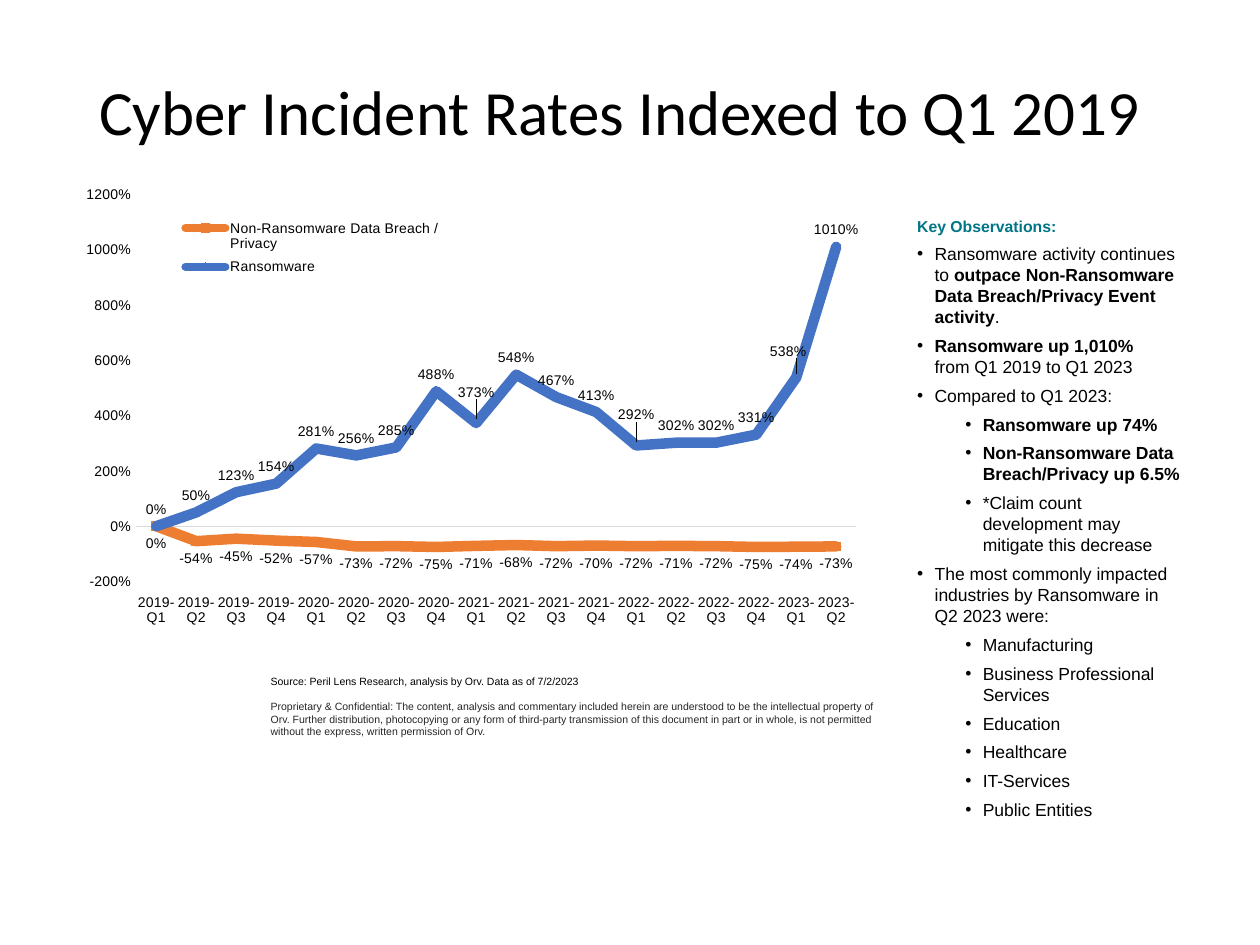
from dataclasses import dataclass
from typing import NamedTuple

from pptx import Presentation
from pptx.chart.data import CategoryChartData
from pptx.dml.color import RGBColor
from pptx.enum.chart import (XL_CHART_TYPE, XL_LABEL_POSITION, XL_LEGEND_POSITION,
                             XL_TICK_LABEL_POSITION, XL_TICK_MARK)
from pptx.enum.text import MSO_ANCHOR
from pptx.oxml import parse_xml
from pptx.oxml.ns import nsdecls, qn
from pptx.util import Pt


@dataclass(frozen=True)
class Theme:
    head: str = "Calibri"
    body: str = "Arial"
    ink: str = "000000"
    soft: str = "262626"
    teal: str = "007585"
    rule: str = "D9D9D9"
    orange: str = "ED7D31"
    blue: str = "4472C4"
    title: float = 36
    text: float = 10
    key: float = 9
    label: float = 8
    note: float = 6


class Box(NamedTuple):
    left: float
    top: float
    width: float
    height: float


class Run(NamedTuple):
    text: str
    bold: bool = False


class Item(NamedTuple):
    runs: list
    level: int = 0


class Line(NamedTuple):
    name: str
    color: str
    side: XL_LABEL_POSITION
    values: list
    moved: dict  # point index -> label offset as fractions of the chart


THEME = Theme()
INDENT = (10, 37.5)
HANG = 10
GAP = 2.2
BREAK = "\n"

QUARTERS = [f"{year}-Q{q}" for year in range(2019, 2024) for q in range(1, 5)][:18]
LINES = [
    Line("Non-Ransomware Data Breach / Privacy", THEME.orange, XL_LABEL_POSITION.BELOW,
         [0, -0.54, -0.45, -0.52, -0.57, -0.73, -0.72, -0.75, -0.71, -0.68,
          -0.72, -0.7, -0.72, -0.71, -0.72, -0.75, -0.74, -0.73], {}),
    Line("Ransomware", THEME.blue, XL_LABEL_POSITION.ABOVE,
         [0, 0.5, 1.23, 1.54, 2.81, 2.56, 2.85, 4.88, 3.73, 5.48,
          4.67, 4.13, 2.92, 3.02, 3.02, 3.31, 5.38, 10.1],
         {8: (0, -0.03), 12: (0, -0.03), 16: (-0.01, -0.02)}),
]
ITEMS = [
    Item([Run("Ransomware activity continues to "),
          Run("outpace Non-Ransomware Data Breach/Privacy Event activity", True), Run(".")]),
    Item([Run("Ransomware up 1,010%", True), Run(BREAK), Run("from Q1 2019 to Q1 2023")]),
    Item([Run("Compared to Q1 2023:")]),
    Item([Run("Ransomware up 74%", True)], 1),
    Item([Run("Non-Ransomware Data Breach/Privacy up 6.5%", True)], 1),
    Item([Run("*Claim count development may mitigate this decrease")], 1),
    Item([Run("The most commonly impacted industries by Ransomware in Q2 2023 were:")]),
    *(Item([Run(name)], 1) for name in (
        "Manufacturing", "Business Professional Services", "Education",
        "Healthcare", "IT-Services", "Public Entities")),
]
SOURCE = "Source: Peril Lens Research, analysis by Orv. Data as of 7/2/2023"
NOTICE = ("Proprietary & Confidential: The content, analysis and commentary included herein "
          "are understood to be the intellectual property of Orv. Further distribution, "
          "photocopying or any form of third-party transmission of this document in part or "
          "in whole, is not permitted without the express, written permission of Orv.")


def rgb(color: str) -> RGBColor:
    return RGBColor.from_string(color)


def style(font, size: float, color: str = THEME.ink, bold: bool = False,
          face: str = THEME.body) -> None:
    font.size, font.bold, font.name = Pt(size), bold, face
    font.color.rgb = rgb(color)


def add_frame(slide, box: Box):
    frame = slide.shapes.add_textbox(*map(Pt, box)).text_frame
    frame.word_wrap = True
    return frame


def add_run(para, text: str, size: float, **look) -> None:
    run = para.add_run()
    run.text = text
    style(run.font, size, **look)


def add_bullet(para, level: int) -> None:
    props = para._p.get_or_add_pPr()
    props.set("marL", str(Pt(INDENT[level])))
    props.set("indent", str(-Pt(HANG)))
    props.append(parse_xml(f'<a:buClr {nsdecls("a")}><a:srgbClr val="{THEME.ink}"/></a:buClr>'))
    props.append(parse_xml(f'<a:buFont {nsdecls("a")} typeface="{THEME.body}"/>'))
    props.append(parse_xml(f'<a:buChar {nsdecls("a")} char="•"/>'))


def add_title(slide) -> None:
    frame = add_frame(slide, Box(49.7, 38.2, 620.6, 54.7))
    frame.vertical_anchor = MSO_ANCHOR.MIDDLE
    para = frame.paragraphs[0]
    para.line_spacing = 0.9
    add_run(para, "Cyber Incident Rates Indexed to Q1 2019", THEME.title, face=THEME.head)


def add_points(slide) -> None:
    frame = add_frame(slide, Box(517, 120.2, 166.3, 373.7))
    para = frame.paragraphs[0]
    para.space_after = Pt(GAP)
    add_run(para, "Key Observations:", THEME.key, color=THEME.teal, bold=True)
    for item in ITEMS:
        para = frame.add_paragraph()
        para.level = item.level
        para.space_before = para.space_after = Pt(GAP)
        add_bullet(para, item.level)
        for run in item.runs:
            if run.text == BREAK:
                para.add_line_break()
            else:
                add_run(para, run.text, THEME.text, bold=run.bold)


def add_notes(slide) -> None:
    frame = add_frame(slide, Box(147.6, 382.3, 362.9, 43.9))
    add_run(frame.paragraphs[0], SOURCE, THEME.note)
    para = frame.add_paragraph()
    para.space_before = Pt(7)
    add_run(para, NOTICE, THEME.note, color=THEME.soft)


def set_layout(node, index: int, **parts) -> None:
    """Give a chart part a manual layout, as its child at this index."""
    for old in node.findall(qn("c:layout")):
        node.remove(old)
    body = "".join(f'<c:{tag} val="{val}"/>' for tag, val in parts.items())
    node.insert(index, parse_xml(
        f'<c:layout {nsdecls("c")}><c:manualLayout>{body}</c:manualLayout></c:layout>'))


def style_line(series, line: Line) -> None:
    series.smooth = False
    series.marker.style = None
    series.format.line.color.rgb = rgb(line.color)
    series.format.line.width = Pt(6)
    series._element.find(".//" + qn("a:ln")).set("cap", "rnd")
    labels = series.data_labels
    labels.show_value = True
    labels.number_format, labels.number_format_is_linked = "0%", False
    labels.position = line.side
    style(labels.font, THEME.label)
    for index, (dx, dy) in line.moved.items():
        label = series.points[index].data_label
        label.position = line.side
        style(label.font, THEME.label)
        node = series._element.xpath(f'c:dLbls/c:dLbl[c:idx/@val="{index}"]')[0]
        set_layout(node, 1, x=dx, y=dy)
        node.insert(2, parse_xml(
            f'<c:numFmt {nsdecls("c")} formatCode="0%" sourceLinked="0"/>'))


def style_axes(chart) -> None:
    cat, val = chart.category_axis, chart.value_axis
    for axis in (cat, val):
        axis.major_tick_mark = axis.minor_tick_mark = XL_TICK_MARK.NONE
        axis.has_major_gridlines = False
        style(axis.tick_labels.font, THEME.label)
    cat.tick_label_position = XL_TICK_LABEL_POSITION.LOW
    cat.format.line.color.rgb = rgb(THEME.rule)
    cat.format.line.width = Pt(0.75)
    val.minimum_scale, val.maximum_scale, val.major_unit = -2, 12, 2
    val.format.line.fill.background()
    val.tick_labels.number_format = "0%"
    val.tick_labels.number_format_is_linked = False


def add_graph(slide) -> None:
    data = CategoryChartData(number_format="0%")
    data.categories = QUARTERS
    for line in LINES:
        data.add_series(line.name, line.values)
    box = Box(36.7, 105.8, 457.2, 263.5)
    chart = slide.shapes.add_chart(XL_CHART_TYPE.LINE, *map(Pt, box), data).chart
    chart.has_title = False
    style(chart.font, THEME.label)
    plot = chart.plots[0]
    plot.vary_by_categories = False
    for series, line in zip(plot.series, LINES):
        style_line(series, line)
    style_axes(chart)
    chart.has_legend = True
    legend = chart.legend
    legend.position = XL_LEGEND_POSITION.BOTTOM
    legend.include_in_layout = False
    style(legend.font, THEME.label)
    set_layout(legend._element, 1, xMode="edge", yMode="edge", x=0.13, y=0.06, w=0.36, h=0.15)
    area = chart._chartSpace.find(".//" + qn("c:plotArea"))
    set_layout(area, 0, layoutTarget="inner", xMode="edge", yMode="edge",
               x=0.09, y=0.02, w=0.9, h=0.84)


def main() -> None:
    deck = Presentation()
    deck.slide_width, deck.slide_height = Pt(720), Pt(540)
    slide = deck.slides.add_slide(deck.slide_layouts[6])
    for draw in (add_title, add_points, add_notes, add_graph):
        draw(slide)
    deck.save("out.pptx")


if __name__ == "__main__":
    main()
